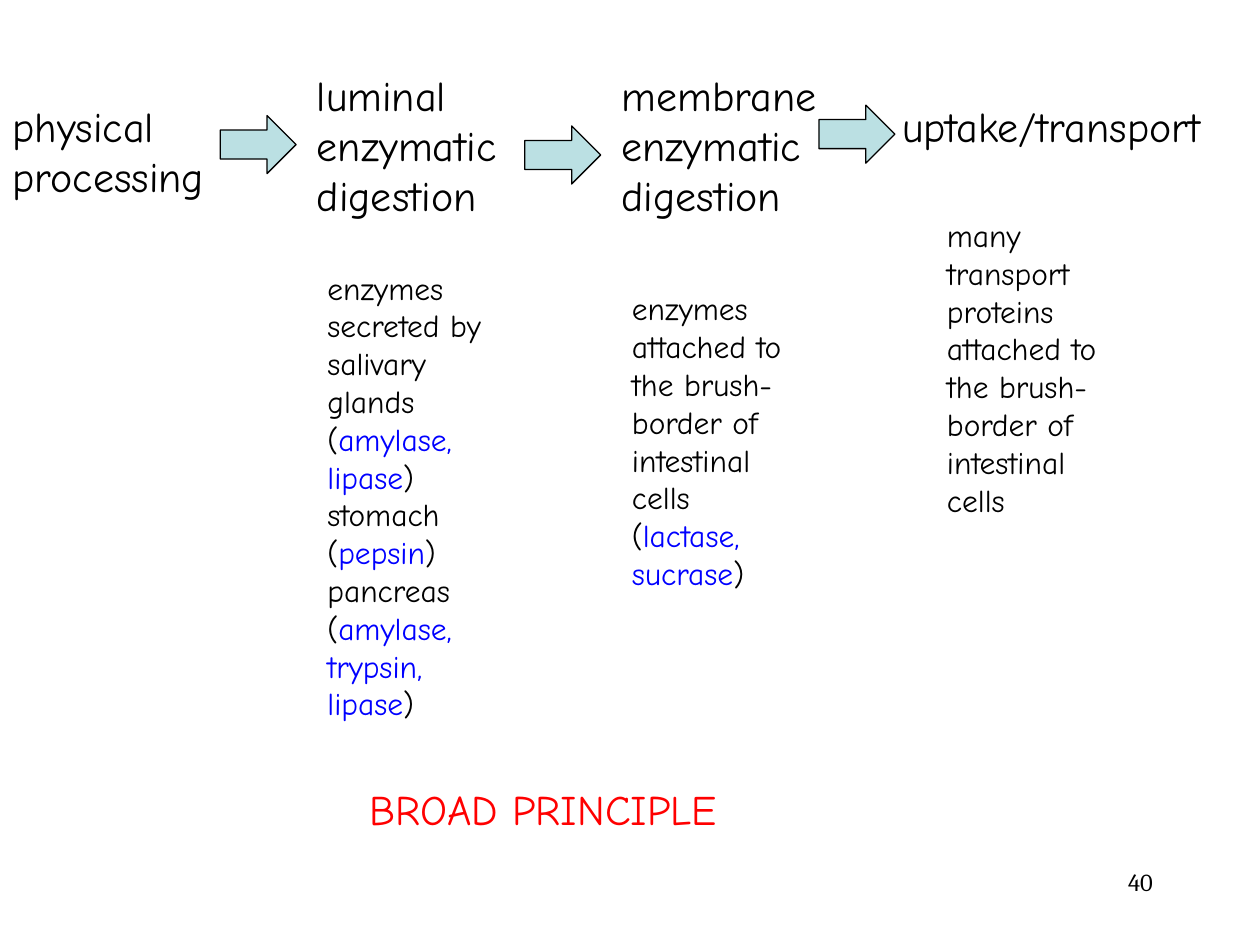
from pptx import Presentation
from pptx.dml.color import RGBColor as RGB
from pptx.enum.shapes import MSO_SHAPE as Shape
from pptx.enum.text import PP_ALIGN as Align
from pptx.util import Cm, Pt

HUES = {"ink": "000000", "blue": "0000FF", "red": "FF0000", "teal": "BBE0E3"}


class Deck:
    """Holds the style and the current slide."""
    font = "Comic Neue"
    big, mid, small = 24, 18, 14

    def __init__(self):
        self.prs = Presentation()
        self.prs.slide_width, self.prs.slide_height = Cm(25.4), Cm(19.05)
        self.slide = self.prs.slides.add_slide(self.prs.slide_layouts[6])

    def hue(self, name):
        return RGB.from_string(HUES[name])

    def text(self, box, paras, size, font=None, align=Align.LEFT):
        """Each paragraph is a list of (words, hue) runs."""
        frame = self.slide.shapes.add_textbox(*map(Cm, box)).text_frame
        frame.word_wrap = True
        for i, runs in enumerate(paras):
            para = frame.add_paragraph() if i else frame.paragraphs[0]
            para.alignment = align
            for words, hue in runs:
                run = para.add_run()
                run.text = words
                run.font.name = font or self.font
                run.font.size = Pt(size)
                run.font.color.rgb = self.hue(hue)

    def arrow(self, left, top):
        arrow = self.slide.shapes.add_shape(
            Shape.RIGHT_ARROW, Cm(left), Cm(top), Cm(1.53), Cm(1.17))
        arrow.shadow.inherit = False
        arrow.fill.solid()
        arrow.fill.fore_color.rgb = self.hue("teal")
        arrow.line.color.rgb = self.hue("ink")
        arrow.line.width = Pt(0.75)


def ink(words):
    return words, "ink"


def blue(words):
    return words, "blue"


# Stage headings: box and lines
HEADS = [
    ((0, 1.9, 4.72, 2.31), ["physical", "processing"]),
    ((6.14, 1.27, 4.52, 3.33), ["luminal", "enzymatic", "digestion"]),
    ((12.28, 1.27, 4.57, 3.33), ["membrane", "enzymatic", "digestion"]),
    ((17.94, 1.9, 7.46, 1.27), ["uptake/transport"]),
]

# Arrows between the stages: left, top
ARROWS = [(4.44, 2.33), (10.58, 2.54), (16.51, 2.12)]

# Details below the stages: left, top, height and paragraphs
CELLS = "attached to the brush-border of intestinal cells"
NOTES = [
    (6.35, 5.29, 11.02, [
        [ink("enzymes secreted by")],
        [ink("salivary glands")],
        [ink("("), blue("amylase,")],
        [blue("lipase"), ink(")")],
        [ink("stomach ("), blue("pepsin"), ink(")")],
        [ink("pancreas")],
        [ink("("), blue("amylase,")],
        [blue("trypsin,")],
        [blue("lipase"), ink(")")],
    ]),
    (12.49, 5.71, 7.19, [
        [ink("enzymes " + CELLS)],
        [ink("("), blue("lactase, sucrase"), ink(")")],
    ]),
    (18.84, 4.23, 7.95, [[ink("many transport proteins " + CELLS)]]),
]


def main():
    deck = Deck()
    for box, lines in HEADS:
        deck.text(box, [[ink(line)] for line in lines], deck.big)
    for spot in ARROWS:
        deck.arrow(*spot)
    for left, top, high, paras in NOTES:
        deck.text((left, top, 4.23, high), paras, deck.mid)

    # Closing line and page number
    deck.text((7.2, 15.66, 8.36, 1.3), [[("BROAD PRINCIPLE", "red")]], deck.big)
    deck.text((18.2, 17.35, 5.29, 1.27), [[ink("40")]], deck.small,
              "Cambria", Align.RIGHT)
    deck.prs.save("out.pptx")


if __name__ == "__main__":
    main()
